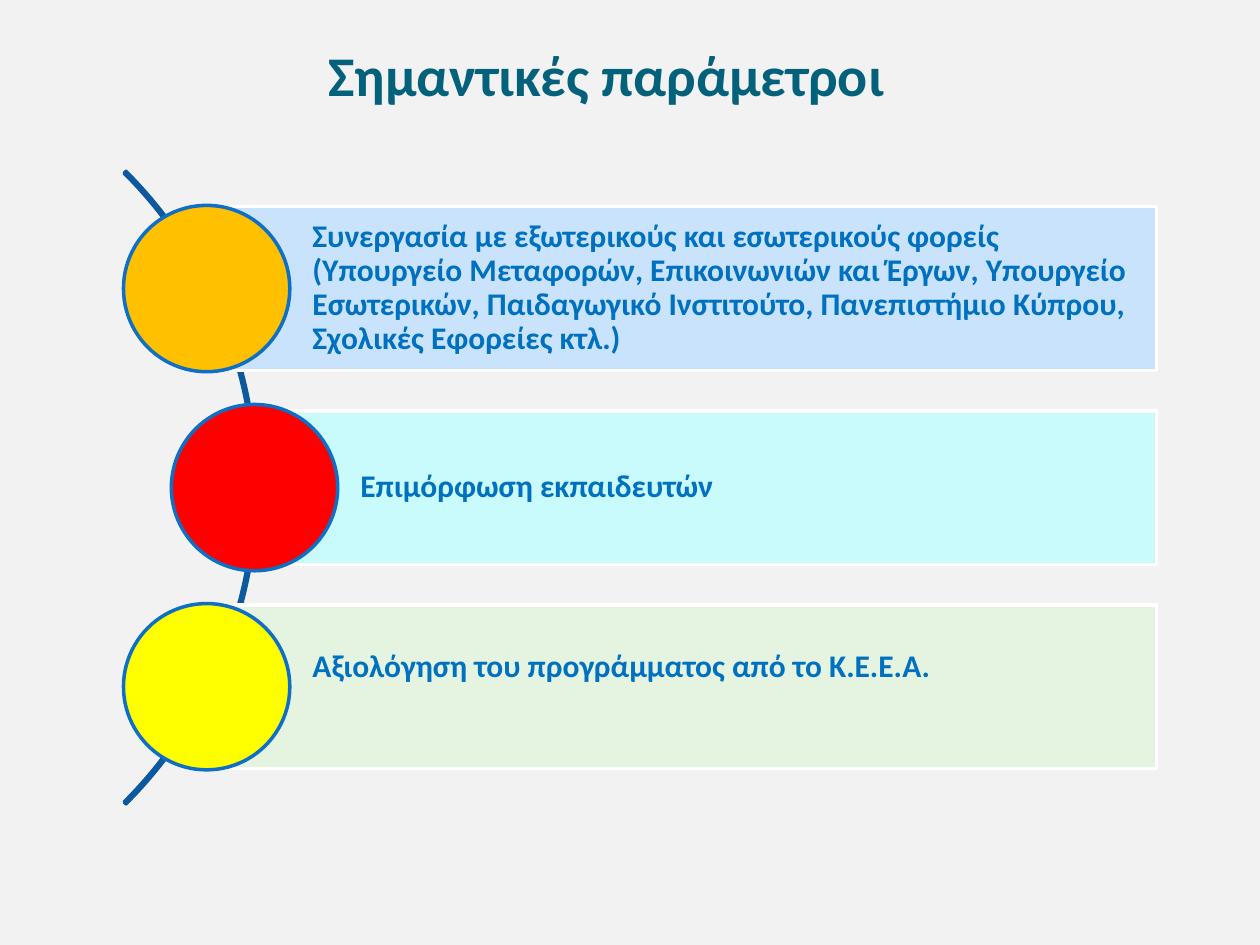
from dataclasses import dataclass

from pptx import Presentation
from pptx.dml.color import RGBColor
from pptx.enum.shapes import MSO_SHAPE
from pptx.enum.text import MSO_ANCHOR, PP_ALIGN
from pptx.util import Inches, Pt

RECTANGLE, OVAL, BLOCK_ARC = MSO_SHAPE.RECTANGLE, MSO_SHAPE.OVAL, MSO_SHAPE.BLOCK_ARC
LEFT, CENTER = PP_ALIGN.LEFT, PP_ALIGN.CENTER
MIDDLE = MSO_ANCHOR.MIDDLE


@dataclass(frozen=True)
class Theme:
    font: str = "Calibri"
    background: str = "F2F2F2"
    title: str = "04617B"
    body: str = "0070C0"
    arc: str = "0C599F"
    ring: str = "0F6FC6"
    band_edge: str = "FFFFFF"
    title_size: int = 32
    body_size: int = 18
    line_width: int = 2


THEME = Theme()


@dataclass(frozen=True)
class Parameter:
    text: str
    band_fill: str
    circle_fill: str
    circle_center: float
    band_height: float
    text_raise: float = 0


PARAMETERS = [
    Parameter("Συνεργασία με εξωτερικούς και εσωτερικούς φορείς (Υπουργείο Μεταφορών, "
              "Επικοινωνιών και Έργων, Υπουργείο Εσωτερικών, Παιδαγωγικό Ινστιτούτο, "
              "Πανεπιστήμιο Κύπρου, Σχολικές Εφορείες κτλ.)",
              "C8E3FB", "FFC000", 1.64, 1.3),
    Parameter("Επιμόρφωση εκπαιδευτών", "C9FAFC", "FF0000", 2.02, 1.22),
    Parameter("Αξιολόγηση του προγράμματος από το Κ.Ε.Ε.Α.",
              "E5F4E0", "FFFF00", 1.64, 1.3, text_raise=0.15),
]


def color(code):
    return RGBColor.from_string(code)


def write(shape, text, *, size, ink, align=LEFT, spacing=1.0, insets=(0.1, 0.05, 0.1, 0.05)):
    """Insets are left, top, right and bottom, in inches."""
    frame = shape.text_frame
    frame.word_wrap = True
    frame.vertical_anchor = MIDDLE
    (frame.margin_left, frame.margin_top,
     frame.margin_right, frame.margin_bottom) = map(Inches, insets)
    paragraph = frame.paragraphs[0]
    paragraph.alignment = align
    paragraph.line_spacing = spacing
    run = paragraph.add_run()
    run.text = text
    run.font.name = THEME.font
    run.font.size = Pt(size)
    run.font.bold = True
    run.font.color.rgb = color(ink)


def add_outlined(slide, kind, box, line, fill=None):
    shape = slide.shapes.add_shape(kind, *map(Inches, box))
    shape.shadow.inherit = False
    if fill:
        shape.fill.solid()
        shape.fill.fore_color.rgb = color(fill)
    else:
        shape.fill.background()
    shape.line.color.rgb = color(line)
    shape.line.width = Pt(THEME.line_width)
    return shape


def add_title(slide, text, box):
    title = slide.shapes.add_textbox(*map(Inches, box))
    write(title, text, size=THEME.title_size, ink=THEME.title, align=CENTER)


def add_arc(slide, box):
    """Draw a thin arc from 315 to 45 degrees of the circle in the box."""
    arc = add_outlined(slide, BLOCK_ARC, box, THEME.arc)
    for index, value in enumerate((189, 27, 0.003)):
        arc.adjustments[index] = value


def add_parameter(slide, parameter, right, middle, diameter):
    """Draw a band that starts at the centre of its circle."""
    center, height = parameter.circle_center, parameter.band_height
    band = add_outlined(slide, RECTANGLE,
                        (center, middle - height / 2, right - center, height),
                        THEME.band_edge, parameter.band_fill)
    write(band, parameter.text, size=THEME.body_size, ink=THEME.body, spacing=0.9,
          insets=(0.84, 0.05, 0.05, 0.05 + 2 * parameter.text_raise))
    radius = diameter / 2
    add_outlined(slide, OVAL, (center - radius, middle - radius, diameter, diameter),
                 THEME.ring, parameter.circle_fill)


def add_curved_list(slide, parameters, box):
    left, top, width, height = box
    arc_diameter, circle_diameter = 7.1, 1.32
    middle = top + height / 2
    arc_right = left + 1.06
    add_arc(slide, (arc_right - arc_diameter, middle - arc_diameter / 2,
                    arc_diameter, arc_diameter))
    step = (height - circle_diameter) / (len(parameters) - 1)
    for index, parameter in enumerate(parameters):
        add_parameter(slide, parameter, left + width,
                      top + circle_diameter / 2 + index * step, circle_diameter)


def main():
    deck = Presentation()
    deck.slide_width, deck.slide_height = Inches(10), Inches(7.5)
    slide = deck.slides.add_slide(deck.slide_layouts[6])
    slide.background.fill.solid()
    slide.background.fill.fore_color.rgb = color(THEME.background)
    add_title(slide, "Σημαντικές παράμετροι", (0.13, 0.19, 9.37, 0.79))
    add_curved_list(slide, PARAMETERS, (0.98, 1.63, 8.2, 4.48))
    deck.save("out.pptx")


if __name__ == "__main__":
    main()
